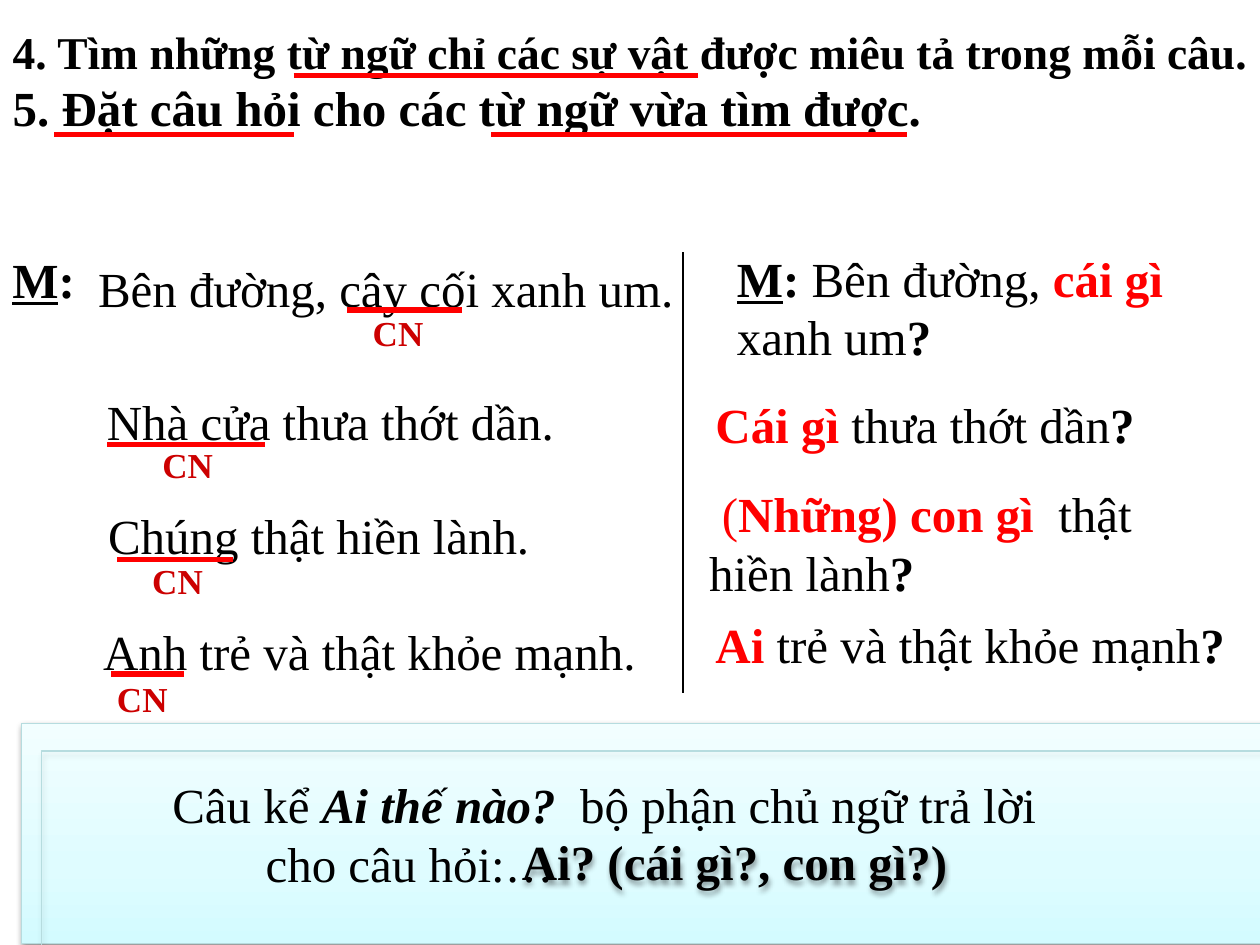
from dataclasses import dataclass

from lxml import etree
from pptx import Presentation
from pptx import util as u
from pptx.dml.color import RGBColor
from pptx.enum import shapes, text
from pptx.oxml import ns, parse_xml

Inches, Pt = u.Inches, u.Pt


@dataclass(frozen=True)
class Theme:
    font: str = "Times New Roman"
    ink: str = "000000"
    red: str = "FF0000"
    label: str = "CC0000"
    border: str = "B6DCDF"
    gradient: tuple = ((0, "D3FBFF"), (35, "DFFCFF"), (100, "F2FEFF"))
    body: int = 28
    heading: int = 26
    small: int = 20


THEME = Theme()
BOLD = {"bold": True}
ASK = {"bold": True, "color": THEME.red}
MARK = [("M", {"bold": True, "underline": True}), (":", BOLD)]


def place(shape, left, top, width, height):
    bounds = {"left": left, "top": top, "width": width, "height": height}
    for name, value in bounds.items():
        setattr(shape, name, Inches(value))


def write(paragraph, runs, size=THEME.body):
    """Fill a paragraph from (wording, format) pairs."""
    for wording, style in runs:
        run = paragraph.add_run()
        run.text = wording
        look = {"name": THEME.font, "size": Pt(size), "bold": False, **style}
        color = look.pop("color", THEME.ink)
        for name, value in look.items():
            setattr(run.font, name, value)
        run.font.color.rgb = RGBColor.from_string(color)


def indent(paragraph, left=0, first=0):
    properties = paragraph._p.get_or_add_pPr()
    properties.set("marL", str(Inches(left)))
    properties.set("indent", str(Inches(first)))
    return properties


def add_heading(placeholder, bounds, wording, size):
    place(placeholder, *bounds)
    frame = placeholder.text_frame
    frame.word_wrap = True
    frame.margin_right = 0  # the first task needs nearly the full slide width
    frame.auto_size = text.MSO_AUTO_SIZE.NONE
    frame.vertical_anchor = text.MSO_ANCHOR.MIDDLE
    line = frame.paragraphs[0]
    line.alignment = text.PP_ALIGN.LEFT
    line.space_before = Pt(0)
    properties = indent(line, 0.38, -0.38)
    etree.SubElement(properties, ns.qn("a:buNone"))
    write(line, [(wording, BOLD)], size)


def add_sentence(slide, bounds, runs, size=THEME.body, first=0):
    box = slide.shapes.add_textbox(*map(Inches, bounds))
    box.text_frame.word_wrap = True
    box.text_frame.auto_size = text.MSO_AUTO_SIZE.SHAPE_TO_FIT_TEXT
    line = box.text_frame.paragraphs[0]
    indent(line, first=first)
    write(line, runs, size)


def add_rule(slide, start, end, color=THEME.red, width=3):
    rule = slide.shapes.add_connector(
        shapes.MSO_CONNECTOR.STRAIGHT, *map(Inches, start + end))
    rule.line.color.rgb = RGBColor.from_string(color)
    rule.line.width = Pt(width)
    etree.SubElement(rule._element.spPr, ns.qn("a:effectLst"))


def add_soft_shadow(shape):
    shape.shadow.inherit = False
    effects = shape._element.spPr.find(ns.qn("a:effectLst"))
    effects.append(parse_xml(
        f'<a:outerShdw {ns.nsdecls("a")} blurRad="{Pt(3.1)}" dist="{Pt(1.6)}" '
        'dir="5400000" rotWithShape="0"><a:srgbClr val="000000">'
        '<a:alpha val="38000"/></a:srgbClr></a:outerShdw>'))


def add_panel(slide, left, top, lines, align, gradient=None):
    """Wide framed panel; each line is (left indent, runs)."""
    panel = slide.shapes.add_shape(
        shapes.MSO_SHAPE.RECTANGLE, *map(Inches, (left, top, 10, 1.75)))
    panel.line.color.rgb = RGBColor.from_string(THEME.border)
    panel.line.width = Pt(0.75)
    if gradient:
        panel.fill.gradient()
        panel.fill.gradient_angle = 90
        stops = panel._element.spPr.find(".//" + ns.qn("a:gsLst"))
        for stop in list(stops):
            stops.remove(stop)
        for position, color in gradient:
            stop = etree.SubElement(stops, ns.qn("a:gs"), pos=str(position * 1000))
            etree.SubElement(stop, ns.qn("a:srgbClr"), val=color)
    else:
        panel.fill.background()
    add_soft_shadow(panel)
    frame = panel.text_frame
    frame.word_wrap = True
    frame.vertical_anchor = text.MSO_ANCHOR.MIDDLE
    for number, (margin, runs) in enumerate(lines):
        line = frame.add_paragraph() if number else frame.paragraphs[0]
        line.alignment = align
        indent(line, margin)
        write(line, runs)


def main():
    prs = Presentation()
    prs.slide_width, prs.slide_height = Inches(10), Inches(7.5)
    slide = prs.slides.add_slide(prs.slide_layouts[1])
    task_find, task_ask = slide.placeholders

    # Tasks and their underlined key words
    add_heading(task_find, (0, 0.05, 10, 0.72),
                "4. Tìm những từ ngữ chỉ các sự vật được miêu tả trong mỗi câu.",
                THEME.heading)
    add_heading(task_ask, (0, 0.47, 10, 0.75),
                "5. Đặt câu hỏi cho các từ ngữ vừa tìm được.", THEME.body)
    for start, end, y in ((2.33, 5.54, 0.6), (0.43, 2.33, 1.07), (3.9, 7.2, 1.07)):
        add_rule(slide, (start, y), (end, y))

    # Left column: sentences, subject underlines and subject labels
    add_sentence(slide, (0, 1.93, 0.75, 0.57), MARK)
    sentences = (
        ((0.68, 2), "Bên đường, cây cối xanh um.", (2.75, 3.67, 2.46), (2.86, 2.42)),
        ((0.75, 3.06), "Nhà cửa thưa thớt dần.", (0.85, 2.1, 3.53), (1.19, 3.47)),
        ((0.76, 3.96), "Chúng thật hiền lành.", (0.93, 1.85, 4.44), (1.11, 4.39)),
        ((0.72, 4.88), "Anh trẻ và thật khỏe mạnh.", (0.88, 1.46, 5.35), (0.83, 5.33)),
    )
    for corner, sentence, (start, end, y), label_corner in sentences:
        add_sentence(slide, (*corner, 4.9, 0.57), [(sentence, {})])
        add_rule(slide, (start, y), (end, y))
        add_sentence(slide, (*label_corner, 0.92, 0.43),
                     [("CN", {"bold": True, "color": THEME.label})], THEME.small)

    # Right column: questions
    add_rule(slide, (5.42, 2), (5.42, 5.5), THEME.ink, 0.75)
    questions = (
        ((5.75, 1.92, 4.25, 1.03), 0,
         MARK + [(" Bên đường,", {}), (" cái gì", ASK), (" xanh um", {})]),
        ((5.58, 3.08, 4.67, 0.57), 0, [("Cái gì", ASK), (" thưa thớt dần", {})]),
        ((5.53, 3.79, 4.25, 1.03), 0.1,
         [("(", {"color": THEME.red}), ("Những) con gì  ", ASK),
          ("thật hiền lành", {})]),
        ((5.58, 4.83, 4.54, 0.57), 0, [("Ai ", ASK), ("trẻ và thật khỏe mạnh", {})]),
    )
    for bounds, first, runs in questions:
        add_sentence(slide, bounds, runs + [("?", BOLD)], first=first)

    # Conclusion and its answer
    conclusion = (
        (1.1, [("Câu kể ", {}), ("Ai thế nào?", {"bold": True, "italic": True}),
               ("  bộ phận chủ ngữ trả lời", {})]),
        (1.84, [("cho câu hỏi:…", {})]),
    )
    add_panel(slide, 0.17, 5.74, conclusion, text.PP_ALIGN.LEFT, THEME.gradient)
    answer = ((1, [("Ai? (cái gì?, con gì?)", BOLD)]),)
    add_panel(slide, 0.33, 5.96, answer, text.PP_ALIGN.CENTER)

    prs.save("out.pptx")


if __name__ == "__main__":
    main()
